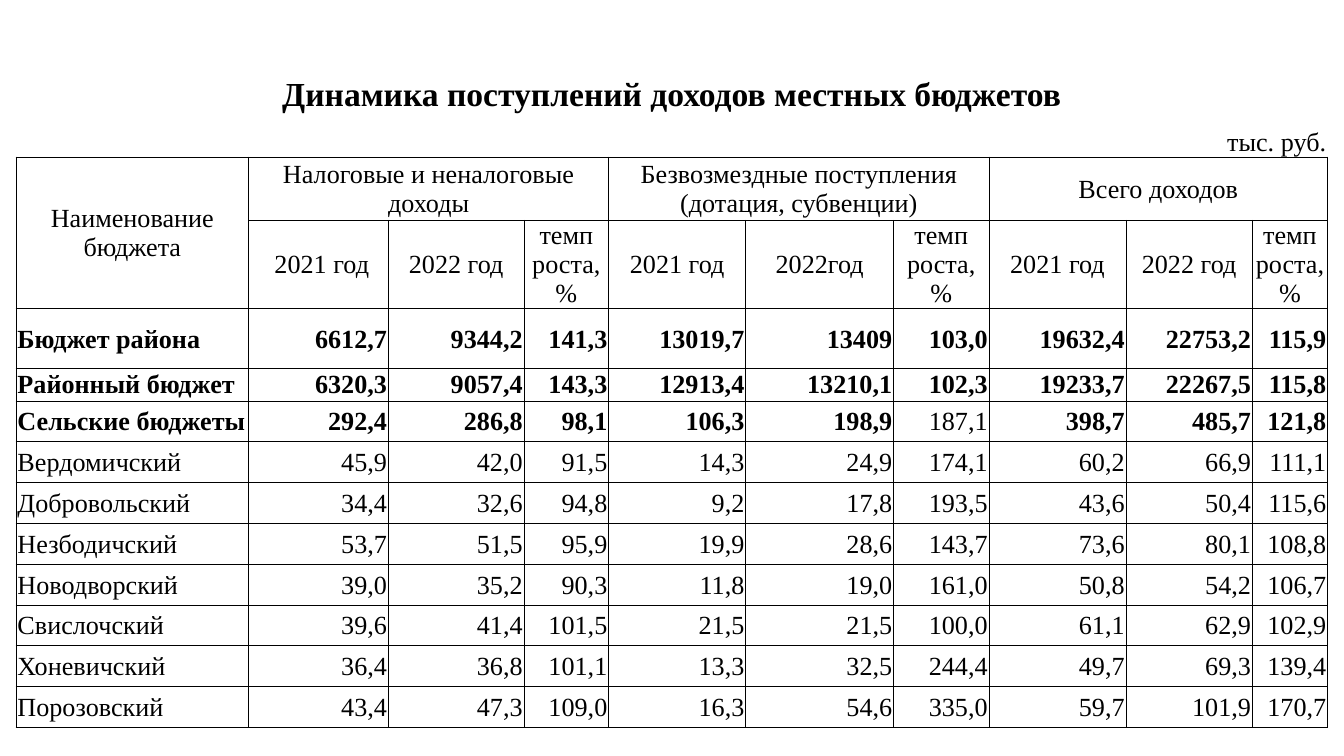
from dataclasses import dataclass

from lxml import etree
from pptx import Presentation
from pptx.dml.color import RGBColor
from pptx.enum.text import MSO_ANCHOR as Anchor, PP_ALIGN as Align
from pptx.oxml.ns import qn
from pptx.util import Inches, Pt

TITLE = "Динамика поступлений доходов местных бюджетов"
UNIT = "тыс. руб."
CORNER = "Наименование бюджета"
GROUPS = [
    (1, 4, "Налоговые и неналоговые доходы"),
    (5, 4, "Безвозмездные поступления (дотация, субвенции)"),
    (9, 5, "Всего доходов"),
]
GROWTH = "темп\nроста, %"
SUBHEADS = [
    " 2021 год", "2022 год", GROWTH,
    "2021 год", "2022год", GROWTH,
    "2021 год", "2022 год", GROWTH,
]
BUDGETS = [
    ("Бюджет района", "6612,7", "9344,2", "141,3", "13019,7", "13409", "103,0", "19632,4", "22753,2", "115,9"),
    ("Районный бюджет", "6320,3", "9057,4", "143,3", "12913,4", "13210,1", "102,3", "19233,7", "22267,5", "115,8"),
    ("Сельские бюджеты", "292,4", "286,8", "98,1", "106,3", "198,9", "187,1", "398,7", "485,7", "121,8"),
    ("Вердомичский", "45,9", "42,0", "91,5", "14,3", "24,9", "174,1", "60,2", "66,9", "111,1"),
    ("Добровольский", "34,4", "32,6", "94,8", "9,2", "17,8", "193,5", "43,6", "50,4", "115,6"),
    ("Незбодичский", "53,7", "51,5", "95,9", "19,9", "28,6", "143,7", "73,6", "80,1", "108,8"),
    ("Новодворский", "39,0", "35,2", "90,3", "11,8", "19,0", "161,0", "50,8", "54,2", "106,7"),
    ("Свислочский", "39,6", "41,4", "101,5", "21,5", "21,5", "100,0", "61,1", "62,9", "102,9"),
    ("Хоневичский", "36,4", "36,8", "101,1", "13,3", "32,5", "244,4", "49,7", "69,3", "139,4"),
    ("Порозовский", "43,4", "47,3", "109,0", "16,3", "54,6", "335,0", "59,7", "101,9", "170,7"),
]
TOTALS = 3
PLAIN_TOTAL = (2, 6)

SLIDE_WIDTH = 10
SLIDE_HEIGHT = SLIDE_WIDTH * 9 / 16
COLUMN_WIDTHS = [1.73, 1.04, 0.74, 0.27, 0.63, 0.89, 0.13, 1.1, 0.71, 0.73, 0.29, 0.6, 0.34, 0.56]
VILLAGE_ROWS = 8
ROW_HEIGHTS = [0.32, 0.32, 0.47, 0.47, 0.45, 0.24] + [2.43 / VILLAGE_ROWS] * VILLAGE_ROWS
FIELDS = [(0, 1), (1, 1), (2, 2), (4, 1), (5, 2), (7, 1), (8, 1), (9, 2), (11, 2), (13, 1)]
UNIT_ROW_SPANS = [(1, 2), (3, 3), (6, 3), (10, 2)]
TITLE_ROW, UNIT_ROW, GROUP_ROW, SUBHEAD_ROW, FIRST_BUDGET_ROW = range(5)
COMPACT_ROW = FIRST_BUDGET_ROW + 1


@dataclass(frozen=True)
class Theme:
    font: str = "Times New Roman"
    ink: str = "000000"
    title_size: int = 18
    body_size: int = 14
    border: float = 0.5
    inset: float = 0.01


THEME = Theme()


def set_borders(cell, visible_sides):
    properties = cell._tc.get_or_add_tcPr()
    for position, side in enumerate("LRTB"):
        line = etree.Element(qn(f"a:ln{side}"), w=str(Pt(THEME.border)))
        if side in visible_sides:
            fill = etree.SubElement(line, qn("a:solidFill"))
            etree.SubElement(fill, qn("a:srgbClr"), val=THEME.ink)
        else:
            etree.SubElement(line, qn("a:noFill"))
        properties.insert(position, line)


def format_grid(table):
    for row_index, row in enumerate(table.rows):
        sides = {TITLE_ROW: "", UNIT_ROW: "B"}.get(row_index, "LRTB")
        for cell in row.cells:
            cell.fill.background()
            cell.margin_left = cell.margin_right = cell.margin_top = Inches(THEME.inset)
            cell.margin_bottom = 0
            set_borders(cell, sides)


def write(table, row, column, text, columns=1, rows=1, align=Align.CENTER,
          anchor=Anchor.MIDDLE, bold=False, size=THEME.body_size):
    cell = table.cell(row, column)
    if columns > 1 or rows > 1:
        cell.merge(table.cell(row + rows - 1, column + columns - 1))
    cell.vertical_anchor = anchor
    cell.text_frame.text = text
    for paragraph in cell.text_frame.paragraphs:
        paragraph.alignment = align
        font = paragraph.font
        font.name = THEME.font
        font.size = Pt(size)
        font.bold = bold
        font.color.rgb = RGBColor.from_string(THEME.ink)


def fill_header(table):
    write(table, TITLE_ROW, 0, TITLE, columns=len(COLUMN_WIDTHS),
          anchor=Anchor.BOTTOM, bold=True, size=THEME.title_size)
    for column, span in UNIT_ROW_SPANS:
        table.cell(UNIT_ROW, column).merge(table.cell(UNIT_ROW, column + span - 1))
    write(table, UNIT_ROW, 12, UNIT, columns=2, align=Align.RIGHT, anchor=Anchor.BOTTOM)
    write(table, GROUP_ROW, 0, CORNER, rows=2)
    for column, span, group in GROUPS:
        write(table, GROUP_ROW, column, group, columns=span)
    for (column, span), subhead in zip(FIELDS[1:], SUBHEADS):
        write(table, SUBHEAD_ROW, column, subhead, columns=span)


def fill_budgets(table):
    for index, budget in enumerate(BUDGETS):
        row = FIRST_BUDGET_ROW + index
        for field, ((column, span), text) in enumerate(zip(FIELDS, budget)):
            write(table, row, column, text, columns=span,
                  align=Align.RIGHT if field else Align.LEFT,
                  anchor=Anchor.TOP if row == COMPACT_ROW else Anchor.MIDDLE,
                  bold=index < TOTALS and (index, field) != PLAIN_TOTAL)


def main():
    deck = Presentation()
    deck.slide_width, deck.slide_height = Inches(SLIDE_WIDTH), Inches(SLIDE_HEIGHT)
    slide = deck.slides.add_slide(deck.slide_layouts[6])
    table = slide.shapes.add_table(
        len(ROW_HEIGHTS), len(COLUMN_WIDTHS), Inches(0.12), Inches(0.53),
        Inches(sum(COLUMN_WIDTHS)), Inches(sum(ROW_HEIGHTS))).table
    table.first_row = table.horz_banding = False
    for column, width in zip(table.columns, COLUMN_WIDTHS):
        column.width = Inches(width)
    for row, height in zip(table.rows, ROW_HEIGHTS):
        row.height = Inches(height)
    format_grid(table)
    fill_header(table)
    fill_budgets(table)
    deck.save("out.pptx")


if __name__ == "__main__":
    main()
